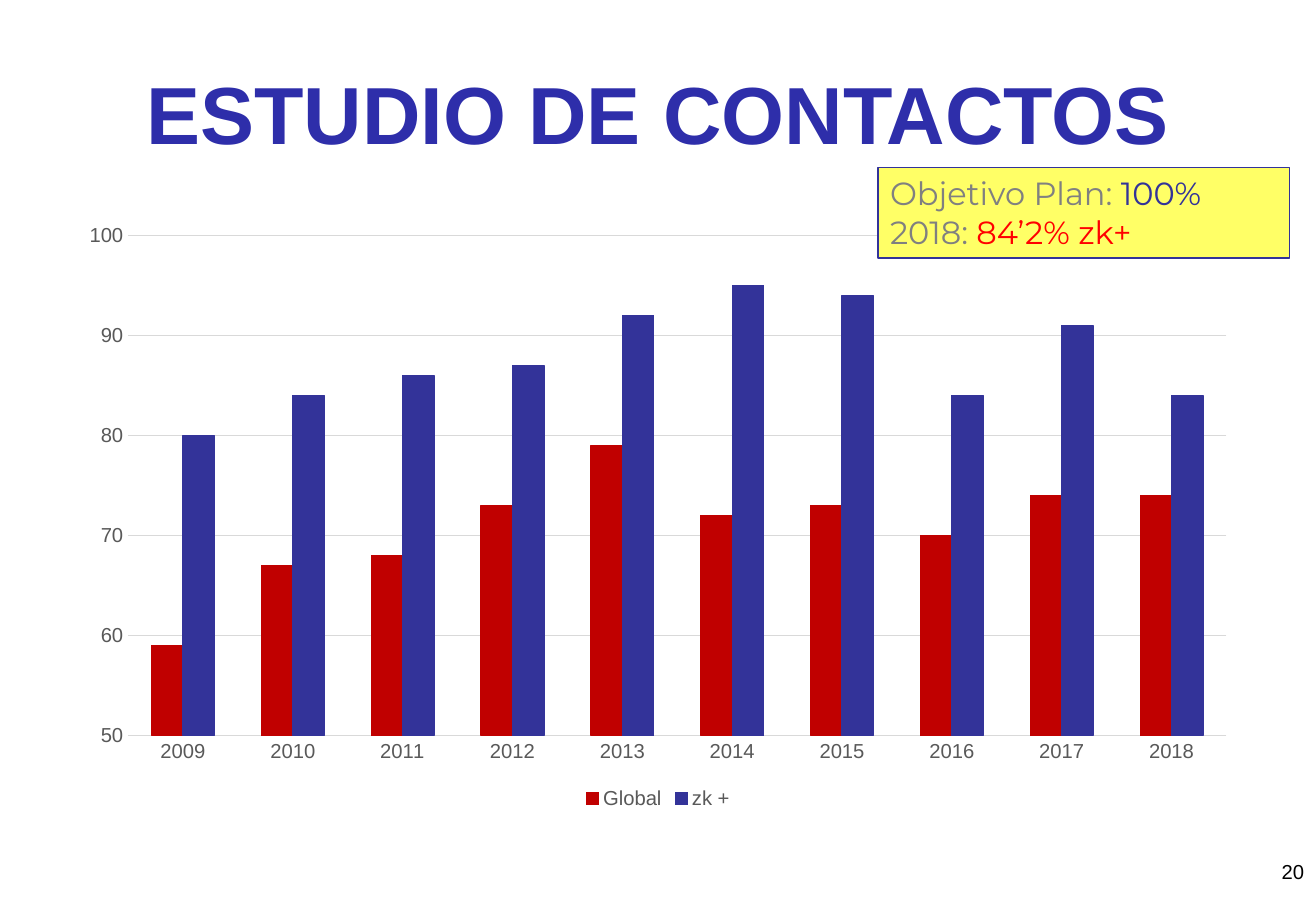
from dataclasses import dataclass

from pptx import Presentation
from pptx.chart.data import CategoryChartData
from pptx.dml.color import RGBColor
from pptx.enum.chart import XL_CHART_TYPE, XL_LEGEND_POSITION, XL_TICK_MARK
from pptx.enum.shapes import MSO_SHAPE
from pptx.enum.text import MSO_ANCHOR, PP_ALIGN
from pptx.util import Pt


@dataclass(frozen=True)
class Theme:
    font: str = "Arial"
    callout_font: str = "Montserrat"
    title_size: int = 48
    callout_size: int = 19
    small_size: int = 12
    title: str = "2E2EAA"
    black: str = "000000"
    navy: str = "333399"
    crimson: str = "C00000"
    red: str = "FF0000"
    yellow: str = "FFFF66"
    gray: str = "808080"
    axis_text: str = "595959"
    grid: str = "D9D9D9"


THEME = Theme()

YEARS = [str(year) for year in range(2009, 2019)]
CONTACTS = [
    ("Global", THEME.crimson, [59, 67, 68, 73, 79, 72, 73, 70, 74, 74]),
    ("zk +", THEME.navy, [80, 84, 86, 87, 92, 95, 94, 84, 91, 84]),
]
TARGET_LINES = [
    [("Objetivo Plan: ", THEME.gray), ("100%", THEME.navy)],
    [("2018: ", THEME.gray), ("84’2% zk+", THEME.red)],
]


def style_font(font, size, color, name=THEME.font, bold=False):
    font.name = name
    font.size = Pt(size)
    font.bold = bold
    font.color.rgb = RGBColor.from_string(color)


def style_fill(fill, color):
    fill.solid()
    fill.fore_color.rgb = RGBColor.from_string(color)


def style_line(line, color):
    line.width = Pt(0.75)
    line.color.rgb = RGBColor.from_string(color)


def add_label(slide, text, box, size, color, alignment, anchor=MSO_ANCHOR.TOP, bold=False):
    shape = slide.shapes.add_textbox(*map(Pt, box))
    text_frame = shape.text_frame
    text_frame.word_wrap = True
    text_frame.vertical_anchor = anchor
    text_frame.text = text
    paragraph = text_frame.paragraphs[0]
    paragraph.alignment = alignment
    style_font(paragraph.runs[0].font, size, color, bold=bold)


def add_callout(slide, lines, box):
    shape = slide.shapes.add_shape(MSO_SHAPE.RECTANGLE, *map(Pt, box))
    shape.shadow.inherit = False
    style_fill(shape.fill, THEME.yellow)
    style_line(shape.line, THEME.navy)
    text_frame = shape.text_frame
    text_frame.word_wrap = True
    text_frame.vertical_anchor = MSO_ANCHOR.TOP
    for index, line in enumerate(lines):
        paragraph = text_frame.add_paragraph() if index else text_frame.paragraphs[0]
        paragraph.alignment = PP_ALIGN.LEFT
        for text, color in line:
            run = paragraph.add_run()
            run.text = text
            style_font(run.font, THEME.callout_size, color, THEME.callout_font)


def style_axes(chart):
    for axis in (chart.category_axis, chart.value_axis):
        axis.major_tick_mark = axis.minor_tick_mark = XL_TICK_MARK.NONE
        style_font(axis.tick_labels.font, THEME.small_size, THEME.axis_text)
    style_line(chart.category_axis.format.line, THEME.grid)
    value_axis = chart.value_axis
    value_axis.minimum_scale = 50
    value_axis.maximum_scale = 100
    value_axis.major_unit = 10
    value_axis.format.line.fill.background()
    style_line(value_axis.major_gridlines.format.line, THEME.grid)


def add_column_chart(slide, categories, series_list, box):
    data = CategoryChartData()
    data.categories = categories
    for name, _, values in series_list:
        data.add_series(name, values)
    chart = slide.shapes.add_chart(
        XL_CHART_TYPE.COLUMN_CLUSTERED, *map(Pt, box), data
    ).chart
    style_font(chart.font, THEME.small_size, THEME.axis_text)
    chart.has_title = False
    chart.has_legend = True
    chart.legend.position = XL_LEGEND_POSITION.BOTTOM
    chart.legend.include_in_layout = False
    style_font(chart.legend.font, THEME.small_size, THEME.axis_text)
    style_axes(chart)

    plot = chart.plots[0]
    plot.gap_width = 150
    plot.overlap = 0
    plot.vary_by_categories = False
    for series, (_, color, _) in zip(plot.series, series_list):
        style_fill(series.format.fill, color)
        style_line(series.format.line, color)


def main():
    presentation = Presentation()
    presentation.slide_width = Pt(780)
    presentation.slide_height = Pt(540)
    slide = presentation.slides.add_slide(presentation.slide_layouts[6])

    add_column_chart(slide, YEARS, CONTACTS, (39, 126, 702, 356.5))
    add_label(slide, "20", (598, 506, 182, 34), THEME.small_size, THEME.black, PP_ALIGN.RIGHT)
    add_label(slide, "ESTUDIO DE CONTACTOS", (0, 34, 780, 65.5), THEME.title_size,
              THEME.title, PP_ALIGN.CENTER, MSO_ANCHOR.MIDDLE, bold=True)
    add_callout(slide, TARGET_LINES, (520.5, 99.5, 244, 53.5))

    presentation.save("out.pptx")


if __name__ == "__main__":
    main()
